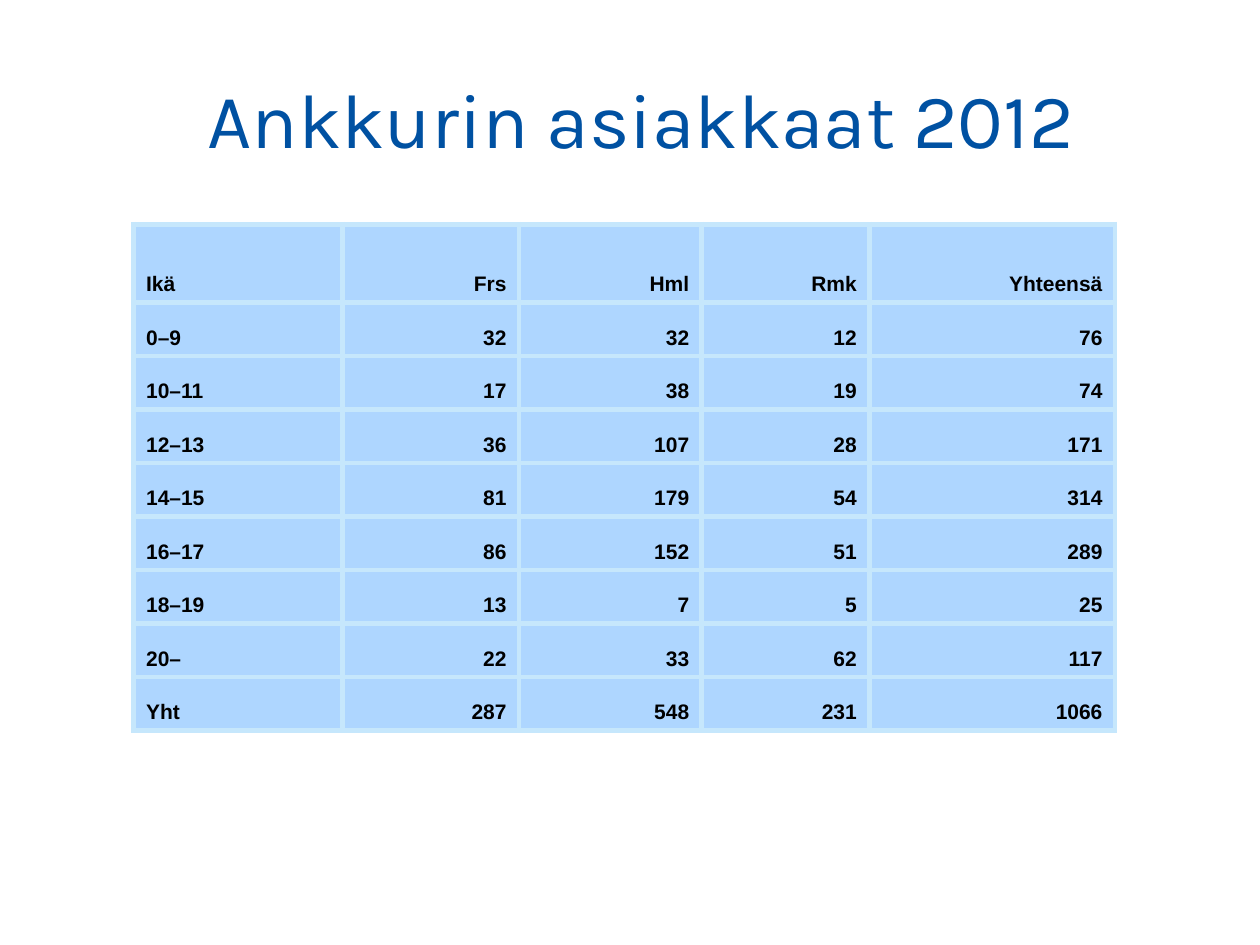
import pptx
import pptx.util
import pptx.dml.color
import pptx.enum.text
import pptx.oxml
import pptx.oxml.ns
from lxml import etree

Inches, Pt = pptx.util.Inches, pptx.util.Pt
RGB = pptx.dml.color.RGBColor
ALIGN, ANCHOR = pptx.enum.text.PP_ALIGN, pptx.enum.text.MSO_ANCHOR
qn = pptx.oxml.ns.qn

# Content
TITLE = "Ankkurin asiakkaat 2012"
ROWS = [
    ("Ikä", "Frs", "Hml", "Rmk", "Yhteensä"),
    ("0–9", 32, 32, 12, 76),
    ("10–11", 17, 38, 19, 74),
    ("12–13", 36, 107, 28, 171),
    ("14–15", 81, 179, 54, 314),
    ("16–17", 86, 152, 51, 289),
    ("18–19", 13, 7, 5, 25),
    ("20–", 22, 33, 62, 117),
    ("Yht", 287, 548, 231, 1066),
]
COL_WIDTHS = [1.66, 1.4, 1.45, 1.33, 1.95]
HEADER_HEIGHT, TABLE_HEIGHT = 0.62, 4.02
COLORS = {"title": "0051A2", "text": "000000", "fill": "5EAEFF", "border": "C6E7FC"}


def add_run(p, text, font, size, color, bold=False):
    r = p.add_run()
    r.text = text
    r.font.name, r.font.size, r.font.bold = font, Pt(size), bold
    r.font.color.rgb = RGB.from_string(COLORS[color])


def style_cell(cell):
    """Half-transparent fill and a 3 pt border on every side."""
    cell.fill.solid()
    cell.fill.fore_color.rgb = RGB.from_string(COLORS["fill"])
    tc_pr = cell._tc.get_or_add_tcPr()
    fill_color = tc_pr.find(qn("a:solidFill")).find(qn("a:srgbClr"))
    etree.SubElement(fill_color, qn("a:alpha"), val="50000")
    for i, side in enumerate(("lnL", "lnR", "lnT", "lnB")):
        ln = etree.Element(qn("a:" + side), w=str(Pt(3)))
        solid = etree.SubElement(ln, qn("a:solidFill"))
        etree.SubElement(solid, qn("a:srgbClr"), val=COLORS["border"])
        tc_pr.insert(i, ln)


prs = pptx.Presentation()
prs.slide_width, prs.slide_height = Inches(10), Inches(7.5)
s = prs.slides.add_slide(prs.slide_layouts[5])

# Title
title = s.shapes.title
title.left, title.top = Inches(0.59), Inches(0.28)
title.width, title.height = Inches(9), Inches(1.07)
tf = title.text_frame
tf.word_wrap = True
tf.vertical_anchor = ANCHOR.BOTTOM
p = tf.paragraphs[0]
p.alignment = ALIGN.CENTER
add_run(p, TITLE, "Karla", 44, "title")

# Table of clients by age group and town
table = s.shapes.add_table(
    len(ROWS), len(COL_WIDTHS), Inches(1.06), Inches(1.78),
    Inches(sum(COL_WIDTHS)), Inches(TABLE_HEIGHT)).table
table.first_row = table.horz_banding = False
for column, width in zip(table.columns, COL_WIDTHS):
    column.width = Inches(width)
body_height = (TABLE_HEIGHT - HEADER_HEIGHT) / (len(ROWS) - 1)
for i, values in enumerate(ROWS):
    table.rows[i].height = Inches(body_height if i else HEADER_HEIGHT)
    for j, value in enumerate(values):
        cell = table.cell(i, j)
        style_cell(cell)
        cell.vertical_anchor = ANCHOR.BOTTOM
        p = cell.text_frame.paragraphs[0]
        p.alignment = ALIGN.RIGHT if j else ALIGN.LEFT
        add_run(p, str(value), "Arial", 12, "text", bold=True)

prs.save("out.pptx")
